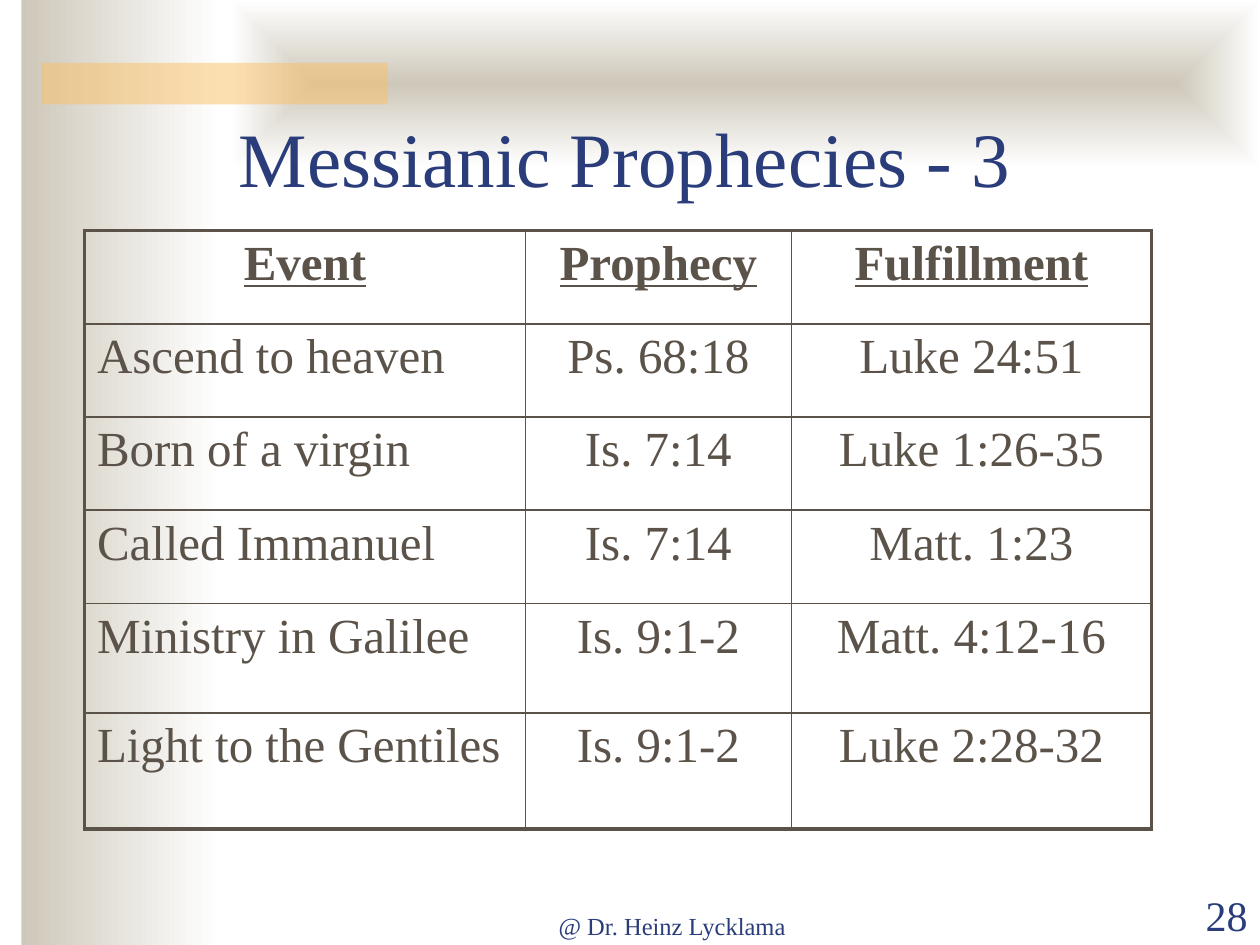
from dataclasses import dataclass

import pptx
import pptx.dml.color
import pptx.enum.shapes
import pptx.enum.text
import pptx.oxml
import pptx.oxml.ns
import pptx.util
from lxml import etree

Inches, Pt = pptx.util.Inches, pptx.util.Pt
RGB = pptx.dml.color.RGBColor.from_string
ALIGN = pptx.enum.text.PP_ALIGN
ANCHOR = pptx.enum.text.MSO_ANCHOR
qn = pptx.oxml.ns.qn


@dataclass(frozen=True)
class Theme:
    font: str = "Times New Roman"
    navy: str = "2A3D7A"
    brown: str = "5B5249"
    sand: str = "CEC8BA"
    white: str = "FFFFFF"
    amber: str = "FAC164"
    title: int = 44
    cell: int = 28
    number: int = 24
    footer: int = 14
    outer_line: float = 2.25
    inner_line: float = 1


THEME = Theme()
COLUMN_WIDTHS = [3.5, 2.11, 2.86]
ROW_HEIGHTS = [0.74] * 4 + [0.87, 0.92]
ROWS = [
    ("Event", "Prophecy", "Fulfillment"),
    ("Ascend to heaven", "Ps. 68:18", "Luke 24:51"),
    ("Born of a virgin", "Is. 7:14", "Luke 1:26-35"),
    ("Called Immanuel", "Is. 7:14", "Matt. 1:23"),
    ("Ministry in Galilee", "Is. 9:1-2", "Matt. 4:12-16"),
    ("Light to the Gentiles", "Is. 9:1-2", "Luke 2:28-32"),
]


def set_font(p, size, color):
    p.font.name = THEME.font
    p.font.size = Pt(size)
    p.font.color.rgb = RGB(color)


def add_rect(s, box):
    sp = s.shapes.add_shape(pptx.enum.shapes.MSO_SHAPE.RECTANGLE, *map(Inches, box))
    sp.shadow.inherit = False
    sp.line.fill.background()
    return sp


def add_gradient(s, box, from_center=False):
    sp = add_rect(s, box)
    sp.fill.gradient()
    sp.fill.gradient_angle = 0
    for stop, position, color in zip(sp.fill.gradient_stops, (0, 1), (THEME.sand, THEME.white)):
        stop.position = position
        stop.color.rgb = RGB(color)
    if from_center:
        grad = sp._element.spPr.find(qn("a:gradFill"))
        shade = etree.Element(qn("a:path"), path="shape")
        etree.SubElement(shade, qn("a:fillToRect"), dict.fromkeys("ltrb", "50000"))
        grad.replace(grad.find(qn("a:lin")), shade)


def add_amber_bar(s, box):
    sp = add_rect(s, box)
    sp.fill.solid()
    sp.fill.fore_color.rgb = RGB(THEME.amber)
    color = sp._element.spPr.find(qn("a:solidFill"))[0]
    etree.SubElement(color, qn("a:alpha"), val="50000")


def add_text(s, box, text, size, align):
    tf = s.shapes.add_textbox(*map(Inches, box)).text_frame
    tf.word_wrap = True
    tf.vertical_anchor = ANCHOR.BOTTOM
    p = tf.paragraphs[0]
    p.text = text
    p.alignment = align
    set_font(p, size, THEME.navy)


def set_borders(cell, widths):
    tcPr = cell._tc.get_or_add_tcPr()
    for i, (side, width) in enumerate(widths.items()):
        ln = etree.Element(qn(f"a:ln{side}"), w=str(Pt(width)))
        fill = etree.SubElement(ln, qn("a:solidFill"))
        etree.SubElement(fill, qn("a:srgbClr"), val=THEME.brown)
        tcPr.insert(i, ln)


def add_prophecy_table(s, box):
    n_rows, n_cols = len(ROWS), len(COLUMN_WIDTHS)
    table = s.shapes.add_table(n_rows, n_cols, *map(Inches, box)).table
    table.first_row = table.horz_banding = False
    for column, width in zip(table.columns, COLUMN_WIDTHS):
        column.width = Inches(width)
    for row, height in zip(table.rows, ROW_HEIGHTS):
        row.height = Inches(height)

    def line(is_edge):
        return THEME.outer_line if is_edge else THEME.inner_line

    for i, texts in enumerate(ROWS):
        for j, text in enumerate(texts):
            cell = table.cell(i, j)
            cell.fill.background()
            set_borders(cell, {"L": line(j == 0), "R": line(j == n_cols - 1),
                               "T": line(i == 0), "B": line(i == n_rows - 1)})
            p = cell.text_frame.paragraphs[0]
            p.text = text
            p.alignment = ALIGN.LEFT if i and j == 0 else ALIGN.CENTER
            set_font(p, THEME.cell, THEME.brown)
            p.font.bold = p.font.underline = i == 0


def add_background(s):
    add_gradient(s, (0.17, 0, 1.58, 7.5))
    add_gradient(s, (1.83, 0, 8.17, 1.33), from_center=True)
    add_amber_bar(s, (0.33, 0.5, 2.75, 0.33))


def main():
    prs = pptx.Presentation()
    prs.slide_width, prs.slide_height = Inches(10), Inches(7.5)
    s = prs.slides.add_slide(prs.slide_layouts[6])

    # Background bands
    add_background(s)
    # Footer and slide number
    add_text(s, (3.75, 7.01, 3.17, 0.5), "@ Dr. Heinz Lycklama", THEME.footer, ALIGN.CENTER)
    add_text(s, (9, 7.01, 1, 0.5), "28", THEME.number, ALIGN.RIGHT)
    # Title and table
    add_text(s, (1.5, 0.83, 6.92, 0.83), "Messianic Prophecies - 3", THEME.title, ALIGN.CENTER)
    add_prophecy_table(s, (0.67, 1.83, sum(COLUMN_WIDTHS), sum(ROW_HEIGHTS)))

    prs.save("out.pptx")


if __name__ == "__main__":
    main()
